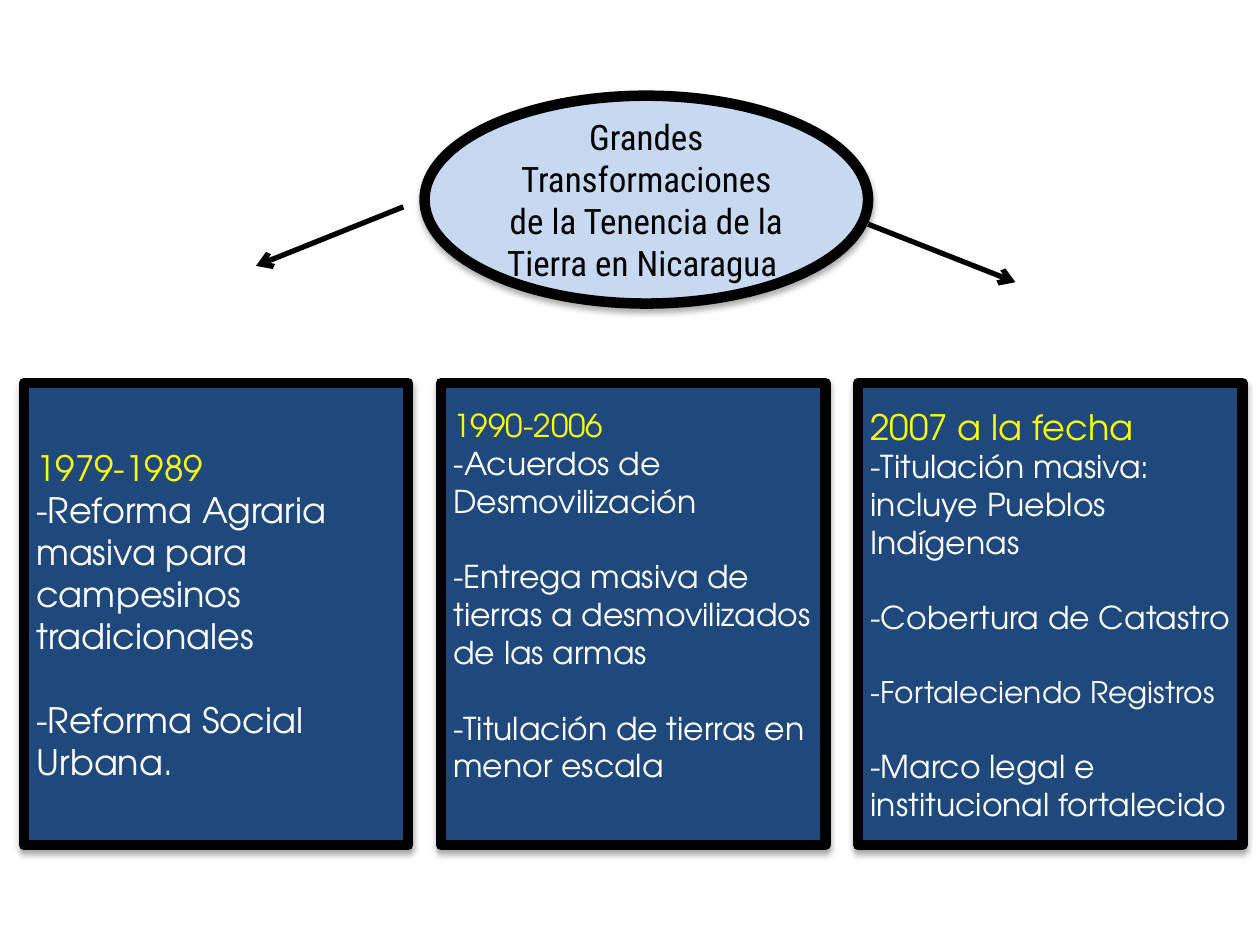
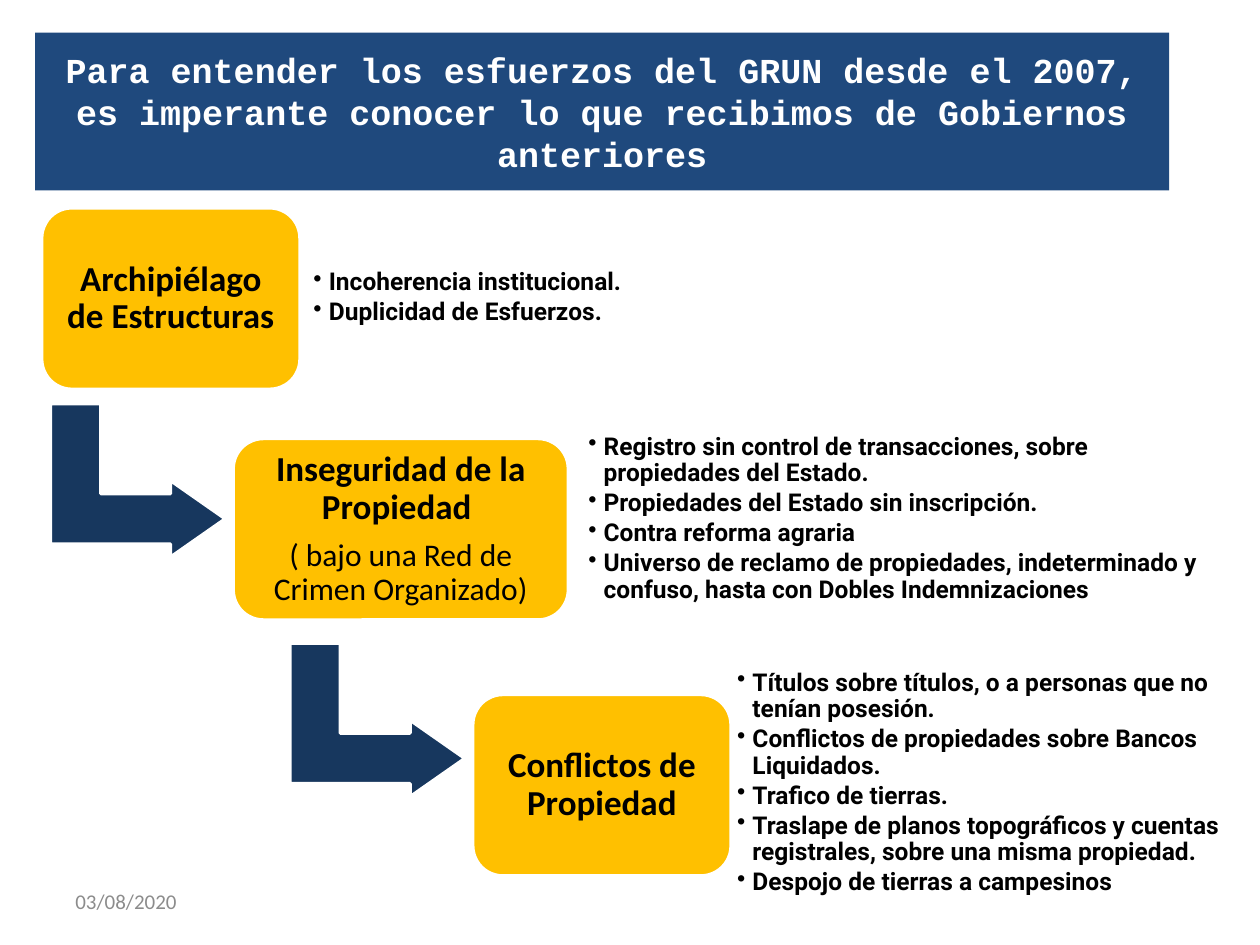
from lxml import etree
from pptx import Presentation
from pptx.dml.color import RGBColor
from pptx.enum.shapes import MSO_CONNECTOR, MSO_SHAPE
from pptx.enum.text import MSO_ANCHOR, MSO_AUTO_SIZE, PP_ALIGN
from pptx.oxml import parse_xml
from pptx.oxml.ns import nsdecls, qn
from pptx.util import Cm, Pt

ELLIPSE, RECT = MSO_SHAPE.OVAL, MSO_SHAPE.RECTANGLE
ROUNDED, BENT_ARROW = MSO_SHAPE.ROUNDED_RECTANGLE, MSO_SHAPE.BENT_UP_ARROW
STRAIGHT = MSO_CONNECTOR.STRAIGHT
MIDDLE = MSO_ANCHOR.MIDDLE
LEFT, CENTER = PP_ALIGN.LEFT, PP_ALIGN.CENTER
NO_FIT = MSO_AUTO_SIZE.NONE
TITLE_ONLY, BLANK = 5, 6

NAVY, DARK_NAVY, PALE_BLUE = "1F497D", "17375E", "C6D9F1"
GOLD, YELLOW, GREY = "FFC000", "FFFF00", "8C8C8C"
BLACK, WHITE = "000000", "FFFFFF"
PERIOD_FONT, STEP_FONT, POINT_FONT = "TeX Gyre Adventor", "Calibri", "Roboto"

# Each period: heading size, heading, measures (text, size, gap before in points)
PERIODS = [
    (20, "1979-1989", [
        ("-Reforma Agraria masiva para campesinos tradicionales", 20, 0),
        ("-Reforma Social Urbana.", 20, 24),
    ]),
    (18, "1990-2006", [
        ("-Acuerdos de Desmovilización", 18, 0),
        ("-Entrega masiva de tierras a desmovilizados de las armas", 18, 21.6),
        ("-Titulación de tierras en menor escala", 18, 21.6),
    ]),
    (20, "2007 a la fecha", [
        ("-Titulación masiva: incluye Pueblos Indígenas", 18, 0),
        ("-Cobertura de Catastro", 18, 21.6),
        ("-Fortaleciendo Registros", 17, 21.6),
        ("-Marco legal e institucional fortalecido", 18, 21.6),
    ]),
]

# Each step: box, heading, remark, box of its points, points
STEPS = [
    ((0.84, 4.19, 5.21, 3.66), "Archipiélago de Estructuras", None,
     (6.17, 4.62, 9.78, 2.77), [
         "Incoherencia institucional.",
         "Duplicidad de Esfuerzos.",
     ]),
    ((4.7, 8.84, 6.76, 3.66), "Inseguridad de la Propiedad ",
     "( bajo una Red de Crimen Organizado)",
     (11.71, 7.92, 13, 5.08), [
         "Registro sin control de transacciones, sobre propiedades del Estado.",
         "Propiedades del Estado sin inscripción.",
         "Contra reforma agraria",
         "Universo de reclamo de propiedades, indeterminado y confuso, "
         "hasta con Dobles Indemnizaciones",
     ]),
    ((9.53, 14, 5.21, 3.66), "Conflictos de Propiedad", None,
     (14.71, 13.16, 10.21, 5.26), [
         "Títulos sobre títulos, o a personas que no tenían posesión.",
         "Conflictos de propiedades sobre Bancos Liquidados.",
         "Trafico de tierras.",
         "Traslape de planos topográficos y cuentas registrales, "
         "sobre una misma propiedad.",
         "Despojo de tierras a campesinos",
     ]),
]
ARROW_RISES = [0.92, 1.25]  # how far each bent arrow starts above the step it leads to


def color(hex_code):
    return RGBColor.from_string(hex_code)


def lengths(box):
    return [Cm(value) for value in box]


def fill_with(shape, hex_code):
    shape.fill.solid()
    shape.fill.fore_color.rgb = color(hex_code)


def add_filled(slide, kind, box, fill, line, line_width):
    shape = slide.shapes.add_shape(kind, *lengths(box))
    shape.shadow.inherit = False
    fill_with(shape, fill)
    shape.line.color.rgb = color(line)
    shape.line.width = Pt(line_width)
    return shape


def add_framed(slide, kind, box, fill):
    """Add a shape with a thick black frame and a soft shadow below it."""
    shape = add_filled(slide, kind, box, fill, BLACK, 6)
    effects = shape._element.spPr.find(qn("a:effectLst"))
    effects.append(parse_xml(
        f'<a:outerShdw {nsdecls("a")} blurRad="{Pt(3.5)}" dist="{Pt(2.2)}" '
        'dir="5400000" rotWithShape="0"><a:srgbClr val="000000">'
        '<a:alpha val="32000"/></a:srgbClr></a:outerShdw>'))
    return shape


def prepare_frame(shape, inset=None):
    frame = shape.text_frame
    frame.word_wrap = True
    frame.auto_size = NO_FIT
    frame.vertical_anchor = MIDDLE
    if inset is not None:
        frame.margin_left = frame.margin_right = Cm(inset)
        frame.margin_top = frame.margin_bottom = Cm(inset)
    return frame


def write(frame, text, font, size, ink, bold=False, align=LEFT,
          before=0, after=0, spacing=1.0):
    """Write text as the frame's next paragraph and return that paragraph."""
    paragraph = frame.paragraphs[-1]
    if paragraph.runs:
        paragraph = frame.add_paragraph()
    paragraph.alignment = align
    paragraph.space_before, paragraph.space_after = Pt(before), Pt(after)
    paragraph.line_spacing = spacing
    run = paragraph.add_run()
    run.text = text
    run.font.name, run.font.size, run.font.bold = font, Pt(size), bold
    run.font.color.rgb = color(ink)
    return paragraph


def add_arrow(slide, start, end):
    arrow = slide.shapes.add_connector(STRAIGHT, *lengths(start + end))
    arrow.line.color.rgb = color(BLACK)
    arrow.line.width = Pt(3)
    etree.SubElement(arrow.line._get_or_add_ln(), qn("a:tailEnd"), type="arrow")
    etree.SubElement(arrow._element.spPr, qn("a:effectLst"))


def add_topic(slide, box):
    """Add the central topic and the arrows that leave it on both sides."""
    left, top, width, _ = box
    frame = prepare_frame(add_framed(slide, ELLIPSE, box, PALE_BLUE))
    write(frame, "Grandes Transformaciones de la Tenencia de la Tierra en Nicaragua ",
          "Roboto Condensed", 20, BLACK, align=CENTER)
    right = left + width
    add_arrow(slide, (left - 0.43, top + 2.24), (left - 3.4, top + 3.43))
    add_arrow(slide, (right, top + 2.59), (right + 2.97, top + 3.76))


def add_period(slide, box, heading_size, heading, measures):
    frame = prepare_frame(add_framed(slide, RECT, box, NAVY))
    write(frame, heading, PERIOD_FONT, heading_size, YELLOW)
    for text, size, gap in measures:
        write(frame, text, PERIOD_FONT, size, WHITE, before=gap)
    return frame


def add_step(slide, box, heading, remark):
    step = add_filled(slide, ROUNDED, box, GOLD, WHITE, 2)
    frame = prepare_frame(step, 0.2)
    layout = {"align": CENTER, "after": 7, "spacing": 0.9}
    if remark is None:
        layout["after"] = 0
    write(frame, heading, STEP_FONT, 20, BLACK, bold=True, **layout)
    if remark:
        write(frame, remark, STEP_FONT, 18, BLACK, **layout)


def add_points(slide, box, points):
    frame = prepare_frame(slide.shapes.add_textbox(*lengths(box)), 0.15)
    for point in points:
        paragraph = write(frame, point, POINT_FONT, 14, BLACK, bold=True,
                          after=2, spacing=0.9)
        properties = paragraph._p.get_or_add_pPr()
        properties.set("marL", str(Cm(0.31)))
        properties.set("indent", str(-Cm(0.31)))
        etree.SubElement(properties, qn("a:buChar"), char="•")


def add_bent_arrow(slide, next_box, rise):
    """Add the arrow that comes down and turns right into the next step."""
    box = (next_box[0] - 3.47, next_box[1] - rise, 3.1, 3.53)
    arrow = add_filled(slide, BENT_ARROW, box, DARK_NAVY, WHITE, 2)
    arrow.rotation = 90
    for index, value in enumerate((0.328, 0.25, 0.358)):
        arrow.adjustments[index] = value


def add_banner(slide, box, text):
    banner = slide.shapes.title
    banner.left, banner.top, banner.width, banner.height = lengths(box)
    fill_with(banner, NAVY)
    write(prepare_frame(banner), text, "Courier New", 20, WHITE, bold=True, align=CENTER)


def add_date(slide, box, date):
    frame = prepare_frame(slide.shapes.add_textbox(*lengths(box)))
    write(frame, date, STEP_FONT, 12, GREY)


def build_transformations(deck):
    slide = deck.slides.add_slide(deck.slide_layouts[BLANK])
    add_topic(slide, (8.56, 1.93, 8.94, 4.19))
    frames = [add_period(slide, (0.48 + 8.41 * column, 7.72, 7.75, 9.32), *period)
              for column, period in enumerate(PERIODS)]
    frames[1].margin_bottom = Cm(0.89)


def build_inheritance(deck):
    slide = deck.slides.add_slide(deck.slide_layouts[TITLE_ONLY])
    add_banner(slide, (0.71, 0.66, 22.86, 3.18),
               "Para entender los esfuerzos del GRUN desde el 2007, es imperante "
               "conocer lo que recibimos de Gobiernos anteriores")
    for step, rise in zip(STEPS[1:], ARROW_RISES):
        add_bent_arrow(slide, step[0], rise)
    for box, heading, remark, points_box, points in STEPS:
        add_step(slide, box, heading, remark)
        add_points(slide, points_box, points)
    add_date(slide, (1.27, 17.65, 5.92, 1.02), "03/08/2020")


def main():
    deck = Presentation()
    deck.slide_width, deck.slide_height = Cm(25.4), Cm(19.05)
    build_transformations(deck)
    build_inheritance(deck)
    deck.save("out.pptx")


if __name__ == "__main__":
    main()
